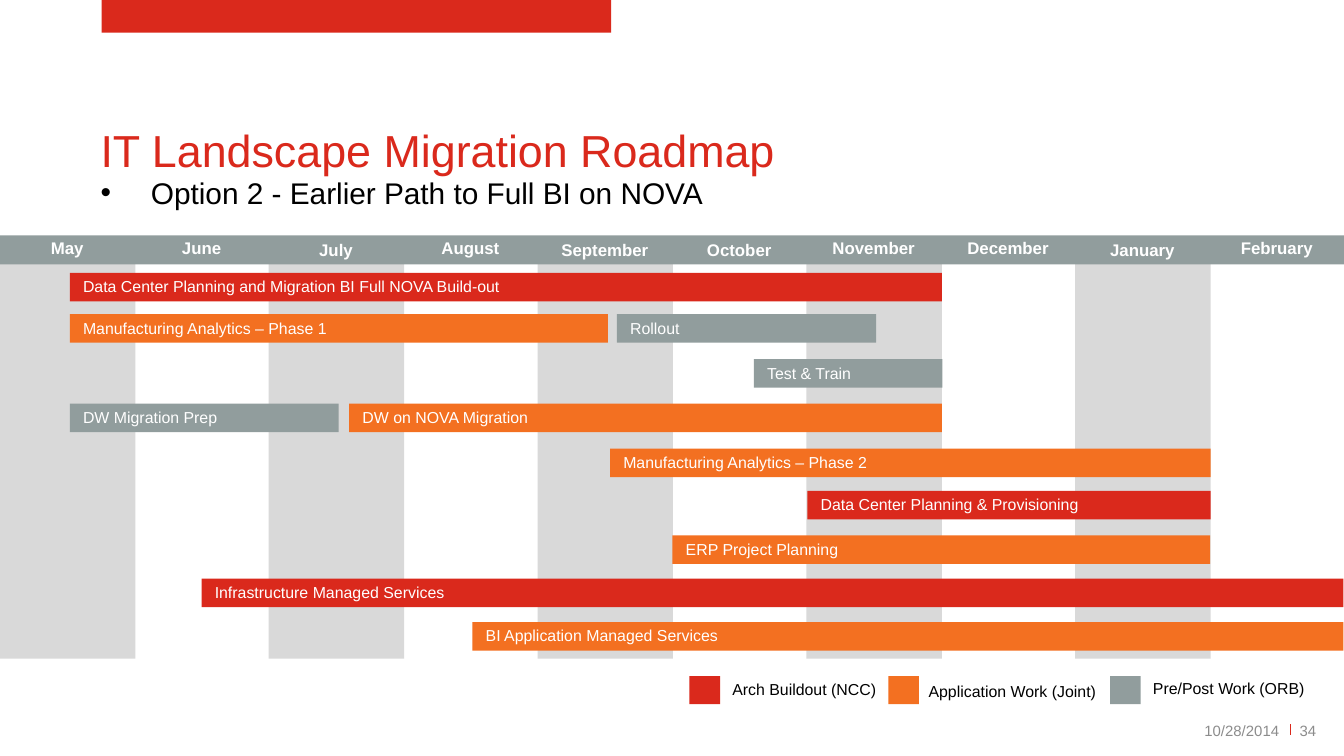
from dataclasses import dataclass

from lxml import etree
from pptx import Presentation
from pptx import util as u
from pptx.dml.color import RGBColor
from pptx.enum import shapes, text
from pptx.oxml.ns import qn

RED, ORANGE, GRAY = "DA291C", "F37021", "919D9D"
SHADE, WHITE, BLACK, FOOTER = "D9D9D9", "FFFFFF", "000000", "8C8C8C"
MONTH_WIDTH = 2.54
LEFT, CENTER, RIGHT = text.PP_ALIGN.LEFT, text.PP_ALIGN.CENTER, text.PP_ALIGN.RIGHT
TOP, MIDDLE = text.MSO_ANCHOR.TOP, text.MSO_ANCHOR.MIDDLE


@dataclass(frozen=True)
class Box:
    left: float
    top: float
    width: float
    height: float

    def lengths(self):
        return [u.Cm(v) for v in (self.left, self.top, self.width, self.height)]


@dataclass(frozen=True)
class Style:
    size: float
    color: str
    align: text.PP_ALIGN = LEFT
    anchor: text.MSO_ANCHOR = MIDDLE
    bold: bool = False
    insets: tuple = (0, 0, 0, 0)


@dataclass(frozen=True)
class Task:
    label: str
    left: float
    top: float
    width: float
    color: str


@dataclass(frozen=True)
class LegendEntry:
    label: str
    color: str
    swatch_left: float
    label_left: float
    label_top: float


MONTHS = ["May", "June", "July", "August", "September", "October",
          "November", "December", "January", "February"]
LOWERED_MONTHS = {"July", "September", "October", "January"}

TASKS = [
    Task("Data Center Planning and Migration BI Full NOVA Build-out", 1.32, 5.16, 16.48, RED),
    Task("Manufacturing Analytics – Phase 1", 1.32, 5.94, 10.17, ORANGE),
    Task("Rollout", 11.66, 5.94, 4.9, GRAY),
    Task("Test & Train", 14.25, 6.79, 3.56, GRAY),
    Task("DW Migration Prep", 1.32, 7.63, 5.08, GRAY),
    Task("DW on NOVA Migration", 6.6, 7.63, 11.2, ORANGE),
    Task("Manufacturing Analytics – Phase 2", 11.53, 8.48, 11.35, ORANGE),
    Task("Data Center Planning & Provisioning", 15.26, 9.28, 7.62, RED),
    Task("ERP Project Planning", 12.71, 10.12, 10.16, ORANGE),
    Task("Infrastructure Managed Services", 3.81, 10.94, 21.58, RED),
    Task("BI Application Managed Services", 8.93, 11.76, 16.46, ORANGE),
]

LEGEND = [
    LegendEntry("Arch Buildout (NCC)", RED, 13.03, 13.84, 12.85),
    LegendEntry("Application Work (Joint)", ORANGE, 16.79, 17.55, 12.88),
    LegendEntry("Pre/Post Work (ORB)", GRAY, 20.98, 21.79, 12.83),
]

TITLE_STYLE = Style(24, RED, insets=(0.25, 0.13, 0.25, 0.13))
SUBTITLE_STYLE = Style(16, BLACK, anchor=TOP)
MONTH_STYLE = Style(9, WHITE, CENTER, bold=True)
TASK_STYLE = Style(8.5, WHITE, insets=(0.25, 0.05, 0.25, 0.08))
LEGEND_STYLE = Style(8.5, BLACK, anchor=TOP)


def rgb(color: str) -> RGBColor:
    return RGBColor.from_string(color)


def write(shape, words: str, style: Style) -> None:
    frame = shape.text_frame
    frame.text = words
    frame.word_wrap = True
    frame.auto_size = text.MSO_AUTO_SIZE.NONE
    frame.vertical_anchor = style.anchor
    (frame.margin_left, frame.margin_top,
     frame.margin_right, frame.margin_bottom) = [u.Cm(v) for v in style.insets]
    paragraph = frame.paragraphs[0]
    paragraph.alignment = style.align
    paragraph.space_before = u.Pt(0)
    paragraph.font.name = "Arial"
    paragraph.font.size = u.Pt(style.size)
    paragraph.font.bold = style.bold
    paragraph.font.color.rgb = rgb(style.color)


def place(shape, box: Box) -> None:
    shape.left, shape.top, shape.width, shape.height = box.lengths()


def add_rect(slide, box: Box, color: str):
    rect = slide.shapes.add_shape(shapes.MSO_SHAPE.RECTANGLE, *box.lengths())
    rect.shadow.inherit = False
    rect.fill.solid()
    rect.fill.fore_color.rgb = rgb(color)
    rect.line.fill.background()
    return rect


def add_label(slide, box: Box, words: str, style: Style) -> None:
    write(slide.shapes.add_textbox(*box.lengths()), words, style)


def add_headings(slide) -> None:
    title = slide.shapes.title
    place(title, Box(1.65, 2.01, 22.05, 1.63))
    write(title, "IT Landscape Migration Roadmap", TITLE_STYLE)
    subtitle = slide.placeholders[1]
    place(subtitle, Box(1.9, 3.3, 21.8, 0.86))
    properties = subtitle.text_frame.paragraphs[0]._p.get_or_add_pPr()
    properties.set("marL", "0")
    properties.set("indent", "0")
    etree.SubElement(properties, qn("a:buNone"))
    write(subtitle, "Option 2 - Earlier Path to Full BI on NOVA", SUBTITLE_STYLE)


def add_calendar(slide) -> None:
    for month in range(0, len(MONTHS), 2):
        add_rect(slide, Box(month * MONTH_WIDTH, 4.98, 2.56, 7.47), SHADE)
    add_rect(slide, Box(-0.3, 4.45, 26, 0.55), GRAY)
    for index, month in enumerate(MONTHS):
        top = 4.45 if month in LOWERED_MONTHS else 4.41
        add_label(slide, Box(0.22 + index * MONTH_WIDTH, top, 2.1, 0.56), month, MONTH_STYLE)


def add_task(slide, task: Task) -> None:
    bar = add_rect(slide, Box(task.left, task.top, task.width, 0.54), task.color)
    write(bar, task.label, TASK_STYLE)


def add_legend_entry(slide, entry: LegendEntry) -> None:
    add_rect(slide, Box(entry.swatch_left, 12.78, 0.58, 0.53), entry.color)
    add_label(slide, Box(entry.label_left, entry.label_top, 3.4, 0.66), entry.label, LEGEND_STYLE)


def add_footer(slide) -> None:
    divider = slide.shapes.add_connector(
        shapes.MSO_CONNECTOR.STRAIGHT, u.Cm(24.38), u.Cm(13.69), u.Cm(24.38), u.Cm(13.9))
    divider.line.color.rgb = rgb(RED)
    divider.line.width = u.Pt(0.5)
    etree.SubElement(divider._element.spPr, qn("a:effectLst"))
    add_label(slide, Box(18.26, 13.42, 5.92, 0.76), "10/28/2014", Style(8, FOOTER, RIGHT))
    add_label(slide, Box(24.56, 13.42, 0.84, 0.76), "34", Style(8, FOOTER))


def main() -> None:
    deck = Presentation()
    deck.slide_width, deck.slide_height = u.Cm(25.4), u.Cm(14.29)
    slide = deck.slides.add_slide(deck.slide_layouts[1])
    add_rect(slide, Box(1.92, -0.04, 9.63, 0.66), RED)
    add_headings(slide)
    add_calendar(slide)
    for task in TASKS:
        add_task(slide, task)
    for entry in LEGEND:
        add_legend_entry(slide, entry)
    add_footer(slide)
    deck.save("out.pptx")


if __name__ == "__main__":
    main()
